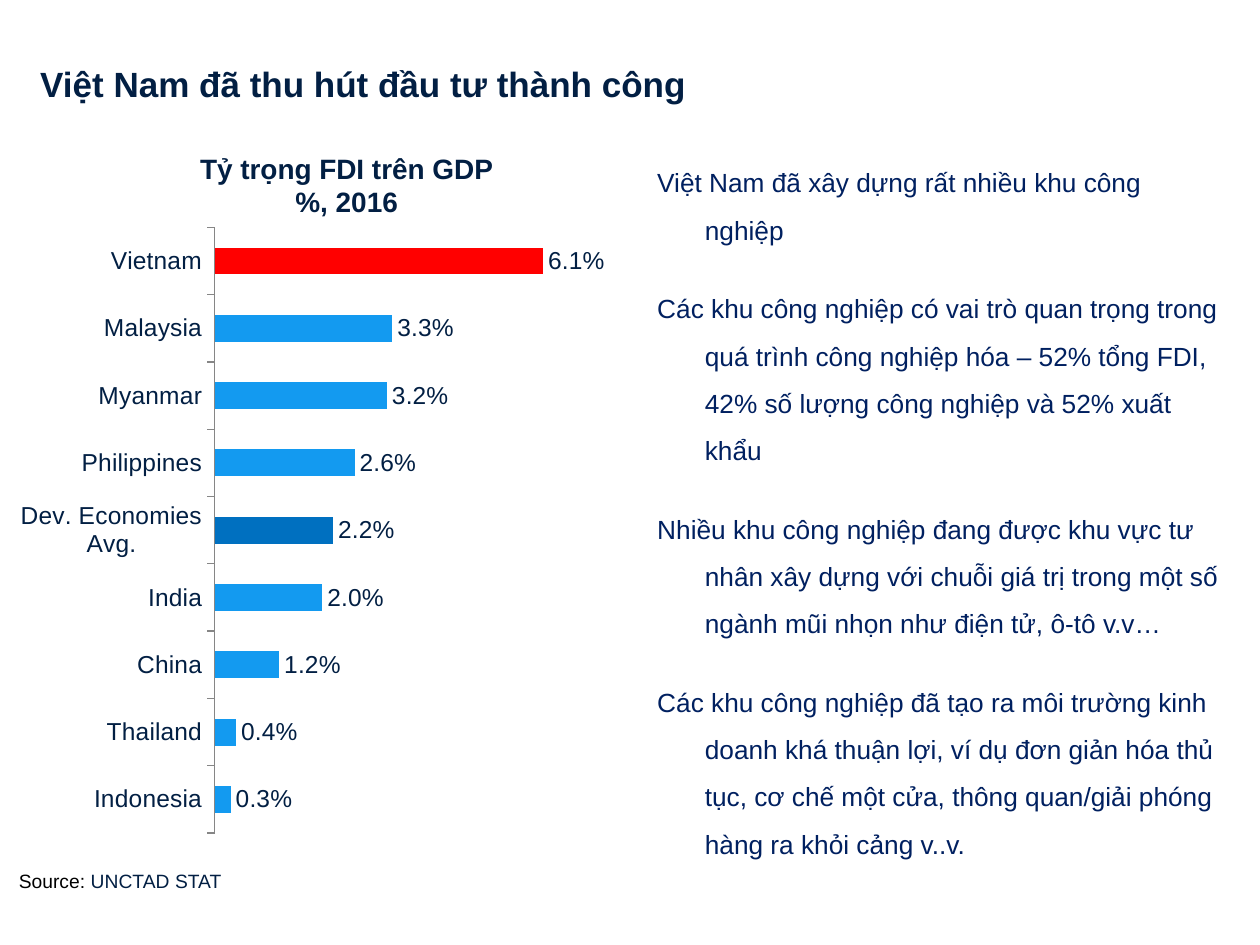
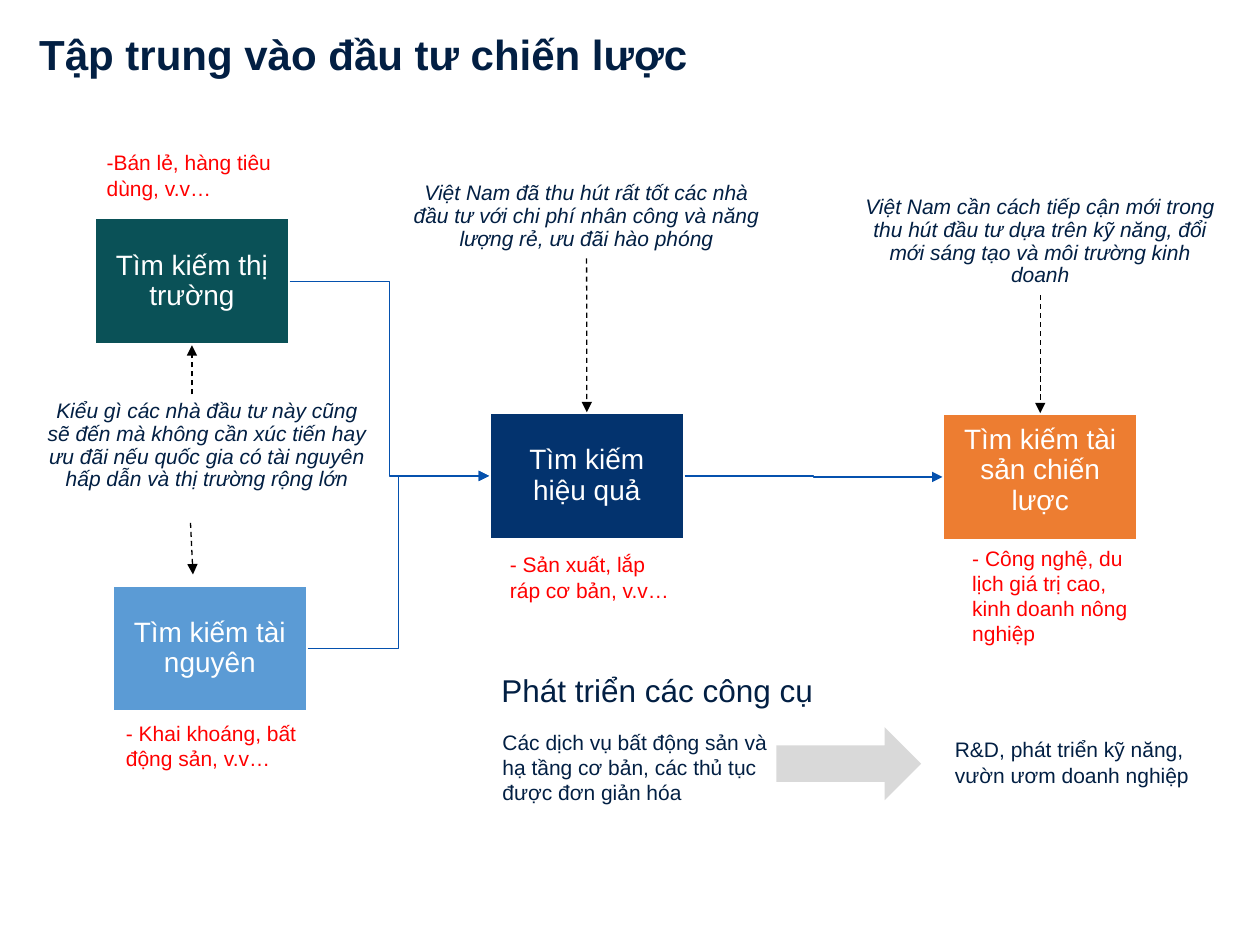
from dataclasses import dataclass
from typing import Optional, Union

from lxml.etree import SubElement
from pptx import Presentation
from pptx.chart.data import CategoryChartData
from pptx.dml.color import RGBColor
from pptx.enum.chart import XL_CHART_TYPE as ChartType
from pptx.enum.chart import XL_LABEL_POSITION as LabelPosition
from pptx.enum.chart import XL_TICK_LABEL_POSITION as TickLabelPosition
from pptx.enum.chart import XL_TICK_MARK as TickMark
from pptx.enum.dml import MSO_LINE as LineDash
from pptx.enum.shapes import MSO_CONNECTOR as ConnectorType
from pptx.enum.shapes import MSO_SHAPE as ShapeType
from pptx.enum.text import MSO_ANCHOR as Anchor
from pptx.enum.text import PP_ALIGN as Align
from pptx.oxml.ns import qn
from pptx.util import Cm, Pt

# Shared style
FONT = "Arial"
NAVY, BODY_BLUE, RED = "021F43", "002060", "FF0000"
WHITE, BLACK, GREY = "FFFFFF", "000000", "D9D9D9"
BAR_BLUE, AVERAGE_BLUE, AXIS_GREY = "139AF0", "0070C0", "868686"
CONNECTOR_BLUE = "0551AE"
TOP, LEFT, BOTTOM, RIGHT = range(4)
TITLE_ONLY = 5
BOX_WIDTH, BOX_HEIGHT = 3.94, 2.57


@dataclass
class Area:
    left: float
    top: float
    width: float
    height: float

    def lengths(self) -> tuple:
        return Cm(self.left), Cm(self.top), Cm(self.width), Cm(self.height)


@dataclass
class TextStyle:
    size: float
    colour: str = NAVY
    bold: bool = False
    italic: bool = False
    align: Align = Align.LEFT
    line_spacing: Optional[float] = None


@dataclass
class InvestorBox:
    text: str
    left: float
    top: float
    fill: str
    top_inset: float = 0.33


@dataclass
class Caption:
    text: str
    area: Area
    style: TextStyle


@dataclass
class Point:
    x: float
    y: float


@dataclass
class Side:
    shape: object
    site: int

    def position(self) -> tuple:
        shape = self.shape
        x = {LEFT: 0, RIGHT: shape.width}.get(self.site, shape.width // 2)
        y = {TOP: 0, BOTTOM: shape.height}.get(self.site, shape.height // 2)
        return shape.left + x, shape.top + y


End = Union[Point, Side]

TITLE = TextStyle(20, bold=True)
LARGE_TITLE = TextStyle(24, bold=True)
CHART_HEADING = TextStyle(16, bold=True, align=Align.CENTER)
BODY = TextStyle(15, BODY_BLUE, line_spacing=1.5)
SOURCE = TextStyle(11)
BOX_LABEL = TextStyle(16, WHITE, align=Align.CENTER, line_spacing=0.9)
REMARK = TextStyle(12, italic=True, align=Align.CENTER, line_spacing=0.9)
EXAMPLE = TextStyle(12, RED)
TOOL = TextStyle(12)
TOOLS_HEADING = TextStyle(18)


def rgb(colour: str) -> RGBColor:
    return RGBColor.from_string(colour)


def format_paragraph(paragraph, style: TextStyle) -> None:
    paragraph.alignment = style.align
    if style.line_spacing:
        paragraph.line_spacing = style.line_spacing
    font = paragraph.font
    font.name, font.size = FONT, Pt(style.size)
    font.bold, font.italic = style.bold, style.italic
    font.color.rgb = rgb(style.colour)


def set_insets(frame, left: float, top: float, right: float, bottom: float) -> None:
    frame.margin_left, frame.margin_top = Cm(left), Cm(top)
    frame.margin_right, frame.margin_bottom = Cm(right), Cm(bottom)


def add_text(slide, text: str, area: Area, style: TextStyle, wrap: bool = True):
    box = slide.shapes.add_textbox(*area.lengths())
    frame = box.text_frame
    frame.word_wrap = wrap
    if not wrap:
        set_insets(frame, 0.1, 0.13, 0.1, 0.13)
    frame.paragraphs[0].text = text
    format_paragraph(frame.paragraphs[0], style)
    return box


def add_titled_slide(presentation, text: str, area: Area, style: TextStyle):
    slide = presentation.slides.add_slide(presentation.slide_layouts[TITLE_ONLY])
    title = slide.shapes.title
    title.left, title.top, title.width, title.height = area.lengths()
    frame = title.text_frame
    frame.text = text
    frame.vertical_anchor = Anchor.BOTTOM
    set_insets(frame, 0, 0, 0, 0)
    format_paragraph(frame.paragraphs[0], style)
    return slide


def add_solid(slide, kind: ShapeType, area: Area, fill: str):
    shape = slide.shapes.add_shape(kind, *area.lengths())
    shape.shadow.inherit = False
    shape.fill.solid()
    shape.fill.fore_color.rgb = rgb(fill)
    shape.line.fill.background()
    return shape


def add_investor_box(slide, box: InvestorBox):
    area = Area(box.left, box.top, BOX_WIDTH, BOX_HEIGHT)
    shape = add_solid(slide, ShapeType.RECTANGLE, area, box.fill)
    shape.line.color.rgb = rgb(WHITE)
    shape.line.width = Pt(2)
    frame = shape.text_frame
    frame.word_wrap = True
    frame.vertical_anchor = Anchor.MIDDLE
    set_insets(frame, 0.33, box.top_inset, 0.33, 0.33)
    frame.text = box.text
    format_paragraph(frame.paragraphs[0], BOX_LABEL)
    return shape


def end_position(end: End) -> tuple:
    return end.position() if isinstance(end, Side) else (Cm(end.x), Cm(end.y))


def add_arrow(slide, start: End, end: End, kind: ConnectorType, colour: str,
              dashed: bool = False) -> None:
    arrow = slide.shapes.add_connector(kind, *end_position(start), *end_position(end))
    if isinstance(start, Side):
        arrow.begin_connect(start.shape, start.site)
    if isinstance(end, Side):
        arrow.end_connect(end.shape, end.site)
    arrow.line.color.rgb = rgb(colour)
    arrow.line.width = Pt(0.75)
    if dashed:
        arrow.line.dash_style = LineDash.DASH
    SubElement(arrow.line._get_or_add_ln(), qn("a:tailEnd"), type="triangle")
    SubElement(arrow._element.spPr, qn("a:effectLst"))


def set_plot_layout(chart, **fractions: float) -> None:
    layout = chart._chartSpace.chart.plotArea.get_or_add_layout() if hasattr(
        chart._chartSpace.chart.plotArea, "get_or_add_layout") else None
    if layout is None:
        plot_area = chart._chartSpace.chart.plotArea
        layout = plot_area.find(qn("c:layout"))
        if layout is None:
            layout = SubElement(plot_area, qn("c:layout"))
            plot_area.insert(0, layout)
    manual = SubElement(layout, qn("c:manualLayout"))
    settings = {"layoutTarget": "inner", "xMode": "edge", "yMode": "edge", **fractions}
    for name, value in settings.items():
        SubElement(manual, qn(f"c:{name}"), val=str(value))


def add_fdi_chart(slide) -> None:
    shares = {
        "Vietnam": 0.061, "Malaysia": 0.033, "Myanmar": 0.032,
        "Philippines": 0.026, "Dev. Economies Avg.": 0.022, "India": 0.02,
        "China": 0.012, "Thailand": 0.004, "Indonesia": 0.003,
    }
    highlights = {"Vietnam": RED, "Dev. Economies Avg.": AVERAGE_BLUE}
    data = CategoryChartData(number_format="0.0%")
    data.categories = list(shares)
    data.add_series("Series 1", list(shares.values()))
    area = Area(0.28, 4.06, 12.01, 13.13)
    chart = slide.shapes.add_chart(ChartType.BAR_CLUSTERED, *area.lengths(), data).chart
    chart.has_legend = chart.has_title = False
    chart.font.name, chart.font.size = FONT, Pt(14)
    chart.font.color.rgb = rgb(NAVY)
    set_plot_layout(chart, x=0.337, y=0.04, w=0.633, h=0.93)

    # Axes
    category_axis, value_axis = chart.category_axis, chart.value_axis
    category_axis.reverse_order = True
    category_axis.major_tick_mark = TickMark.OUTSIDE
    category_axis.tick_label_position = TickLabelPosition.NEXT_TO_AXIS
    category_axis.format.line.color.rgb = rgb(AXIS_GREY)
    value_axis.visible = value_axis.has_major_gridlines = False
    value_axis.minimum_scale, value_axis.maximum_scale = 0, 0.07
    value_axis.major_unit = 0.01

    # Bars and labels
    plot = chart.plots[0]
    plot.gap_width, plot.vary_by_categories = 150, False
    series = plot.series[0]
    series.invert_if_negative = False
    series.format.fill.solid()
    series.format.fill.fore_color.rgb = rgb(BAR_BLUE)
    for index, country in enumerate(shares):
        if country in highlights:
            fill = series.points[index].format.fill
            fill.solid()
            fill.fore_color.rgb = rgb(highlights[country])
    labels = series.data_labels
    labels.show_value = True
    labels.position = LabelPosition.OUTSIDE_END
    labels.number_format, labels.number_format_is_linked = "0.0%", False


def build_fdi_slide(presentation) -> None:
    slide = add_titled_slide(presentation, "Việt Nam đã thu hút đầu tư thành công",
                             Area(0.81, 0, 23.5, 2.11), TITLE)
    # Commentary with hanging indents
    messages = [
        "Việt Nam đã xây dựng rất nhiều khu công nghiệp",
        "Các khu công nghiệp có vai trò quan trọng trong quá trình công nghiệp hóa – "
        "52% tổng FDI, 42% số lượng công nghiệp và 52% xuất khẩu",
        "Nhiều khu công nghiệp đang được khu vực tư nhân xây dựng với chuỗi giá trị "
        "trong một số ngành mũi nhọn như điện tử, ô-tô v.v…",
        "Các khu công nghiệp đã tạo ra môi trường kinh doanh khá thuận lợi, ví dụ đơn giản "
        "hóa thủ tục, cơ chế một cửa, thông quan/giải phóng hàng ra khỏi cảng v..v.",
    ]
    body = add_text(slide, "\n".join(messages[:1]), Area(13, 2.92, 11.94, 15.7), BODY)
    for message in messages[1:]:
        paragraph = body.text_frame.add_paragraph()
        paragraph.text = message
        paragraph.space_before = Pt(18)
        format_paragraph(paragraph, BODY)
    for paragraph in body.text_frame.paragraphs:
        properties = paragraph._p.get_or_add_pPr()
        properties.set("marL", str(Cm(0.96)))
        properties.set("indent", str(Cm(-0.96)))

    # Chart with heading and source
    add_text(slide, "Tỷ trọng FDI trên GDP\n%, 2016", Area(3.89, 2.92, 6.2, 1.63),
             CHART_HEADING, wrap=False)
    source = add_text(slide, "Source: ", Area(0.28, 17.4, 4.42, 0.74), SOURCE, wrap=False)
    paragraph = source.text_frame.paragraphs[0]
    paragraph.runs[0].font.color.rgb = rgb(BLACK)
    paragraph.add_run().text = "UNCTAD STAT"
    add_fdi_chart(slide)


def build_strategy_slide(presentation) -> None:
    slide = add_titled_slide(presentation, "Tập trung vào đầu tư chiến lược",
                             Area(0.79, -0.84, 21.16, 2.44), LARGE_TITLE)
    # Investor types
    market, resource, efficiency, asset = [add_investor_box(slide, box) for box in (
        InvestorBox("Tìm kiếm thị trường", 1.9, 4.39, "0A5157"),
        InvestorBox("Tìm kiếm tài nguyên", 2.26, 11.79, "5B9BD5"),
        InvestorBox("Tìm kiếm hiệu quả", 9.86, 8.31, "03336E"),
        InvestorBox("Tìm kiếm tài sản chiến lược", 19, 8.33, "ED7D31", top_inset=0.08),
    )]
    # Remarks, examples and tools
    captions = [
        Caption("Kiểu gì các nhà đầu tư này cũng sẽ đến mà không cần xúc tiến hay ưu đãi nếu "
                "quốc gia có tài nguyên hấp dẫn và thị trường rộng lớn",
                Area(0.71, 7.95, 6.93, 2.11), REMARK),
        Caption("Việt Nam đã thu hút rất tốt các nhà đầu tư với chi phí nhân công và năng "
                "lượng rẻ, ưu đãi hào phóng", Area(8, 3.56, 7.65, 1.65), REMARK),
        Caption("Việt Nam cần cách tiếp cận mới trong thu hút đầu tư dựa trên kỹ năng, đổi "
                "mới sáng tạo và môi trường kinh doanh", Area(17.12, 3.84, 7.7, 2.11), REMARK),
        Caption("-Bán lẻ, hàng tiêu dùng, v.v…", Area(1.9, 2.9, BOX_WIDTH, 1.27), EXAMPLE),
        Caption("- Khai khoáng, bất động sản, v.v…", Area(2.29, 14.4, BOX_WIDTH, 1.27), EXAMPLE),
        Caption("- Sản xuất, lắp ráp cơ bản, v.v…", Area(10.03, 11, BOX_WIDTH, 1.27), EXAMPLE),
        Caption("- Công nghệ, du lịch giá trị cao, kinh doanh nông nghiệp",
                Area(19.35, 10.87, BOX_WIDTH, 2.31), EXAMPLE),
        Caption("Các dịch vụ bất động sản và hạ tầng cơ bản, các thủ tục được đơn giản hóa",
                Area(9.88, 14.58, 5.92, 1.8), TOOL),
        Caption("R&D, phát triển kỹ năng, vườn ươm doanh nghiệp",
                Area(19, 14.73, 5.26, 1.27), TOOL),
        Caption("Phát triển các công cụ", Area(9.86, 13.41, 13.82, 1.02), TOOLS_HEADING),
    ]
    _, efficiency_remark, asset_remark, *_ = [
        add_text(slide, caption.text, caption.area, caption.style) for caption in captions]
    add_solid(slide, ShapeType.RIGHT_ARROW, Area(15.65, 14.66, 2.92, 1.47), GREY)

    # Flow between investor types
    for start, end in ((market, efficiency), (resource, efficiency), (efficiency, asset)):
        add_arrow(slide, Side(start, RIGHT), Side(end, LEFT), ConnectorType.ELBOW,
                  CONNECTOR_BLUE)
    # Dashed pointers from remarks
    for start, end in (
        (Point(3.87, 7.95), Side(market, BOTTOM)),
        (Point(3.84, 10.54), Point(3.89, 11.58)),
        (Side(efficiency_remark, BOTTOM), Side(efficiency, TOP)),
        (Side(asset_remark, BOTTOM), Side(asset, TOP)),
    ):
        add_arrow(slide, start, end, ConnectorType.STRAIGHT, BLACK, dashed=True)


def main() -> None:
    presentation = Presentation()
    presentation.slide_width, presentation.slide_height = Cm(25.4), Cm(19.05)
    build_fdi_slide(presentation)
    build_strategy_slide(presentation)
    presentation.save("out.pptx")


if __name__ == "__main__":
    main()
